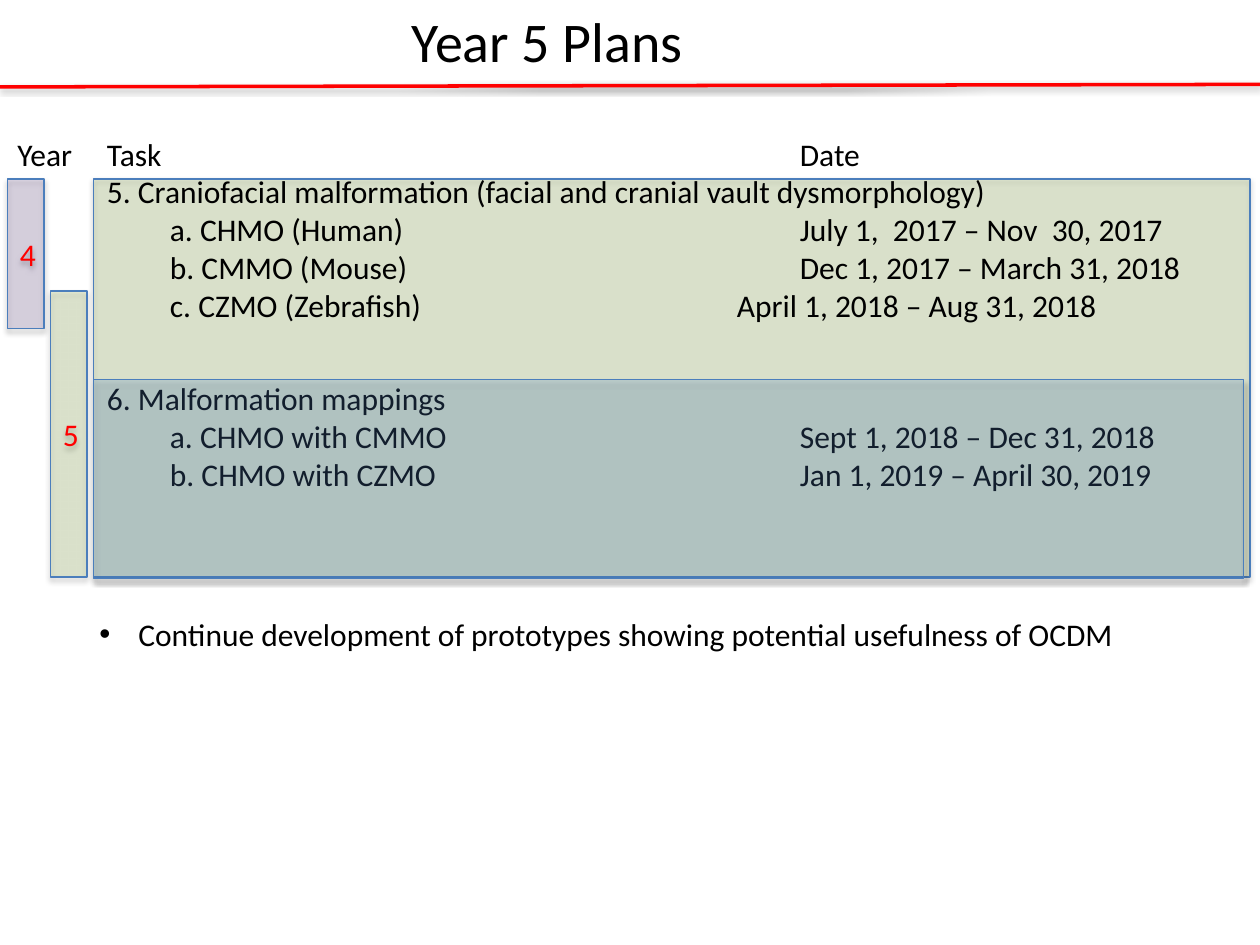
from lxml.etree import SubElement
from pptx import Presentation
from pptx.dml.color import RGBColor
from pptx.enum.shapes import MSO_CONNECTOR, MSO_SHAPE
from pptx.enum.text import MSO_ANCHOR, PP_ALIGN
from pptx.oxml.ns import qn
from pptx.util import Inches, Pt

COLORS = {
    "text": "000000",
    "accent": "FF0000",
    "outline": "4B7EBC",
    "green": "9BBB59",
    "purple": "8064A2",
    "blue": "558ED5",
}
DATE_TAB = 5.5
TASK_ROWS = [
    ("Task\tDate", [DATE_TAB], 0),
    ("5. Craniofacial malformation (facial and cranial vault dysmorphology)", [], 0),
    ("\ta. CHMO (Human)\tJuly 1,  2017 – Nov  30, 2017", [0.5, DATE_TAB], 0),
    ("\tb. CMMO (Mouse)\tDec 1, 2017 – March 31, 2018", [0.5, DATE_TAB], 0),
    ("\tc. CZMO (Zebrafish)\tApril 1, 2018 – Aug 31, 2018", [0.5, DATE_TAB - 0.5], 0),
    ("6. Malformation mappings", [], 31.7),
    ("\ta. CHMO with CMMO \tSept 1, 2018 – Dec 31, 2018", [0.5, DATE_TAB], 0),
    ("\tb. CHMO with CZMO\tJan 1, 2019 – April 30, 2019", [0.5, DATE_TAB], 0),
]
TEXTS = {
    "tasks": ((0.75, 1.02, 9.11, 3.57), 18, True, TASK_ROWS),
    "title": ((3.17, 0, 2.41, 0.64), 32, False, [("Year 5 Plans", [], 0)]),
    "year": ((0.04, 1.02, 0.7, 0.4), 18, True, [("Year", [], 0)]),
    "continuing": (
        (0.69, 4.83, 9.17, 0.4), 18, True,
        [("Continue development of prototypes showing potential usefulness of OCDM", [], 0)],
    ),
}
PANELS = {
    "craniofacial": ((0.74, 1.42, 9.18, 3.16), "green", 22, ""),
    "year 4": ((0.06, 1.42, 0.29, 1.19), "purple", 22, "4"),
    "year 5": ((0.4, 2.31, 0.29, 2.27), "green", 22, "5"),
    "mappings": ((0.74, 3.01, 9.13, 1.58), "blue", 21, ""),
}
DRAW_ORDER = ["craniofacial", "tasks", "rule", "title", "year 4", "year 5", "year", "mappings", "continuing"]


def add_shadow(shape, opacity, distance):
    properties = shape._element.spPr
    effects = properties.find(qn("a:effectLst"))
    if effects is None:
        effects = SubElement(properties, qn("a:effectLst"))
    shadow = SubElement(
        effects, qn("a:outerShdw"), blurRad=str(Pt(3.1)), dist=str(Pt(distance)),
        dir="5400000", rotWithShape="0",
    )
    color = SubElement(shadow, qn("a:srgbClr"), val="000000")
    SubElement(color, qn("a:alpha"), val=str(opacity * 1000))


def format_font(paragraph, size, color):
    values = {"name": "Calibri", "size": Pt(size)}
    for run in paragraph.runs:
        for name, value in values.items():
            setattr(run.font, name, value)
        run.font.color.rgb = RGBColor.from_string(COLORS[color])


presentation = Presentation()
presentation.slide_width = Inches(10)
presentation.slide_height = Inches(7.5)
slide = presentation.slides.add_slide(presentation.slide_layouts[6])

for name in DRAW_ORDER:
    if name == "rule":
        rule = slide.shapes.add_connector(
            MSO_CONNECTOR.STRAIGHT, Inches(0), Inches(0.69), Inches(10), Inches(0.67)
        )
        rule.line.color.rgb = RGBColor.from_string(COLORS["accent"])
        rule.line.width = Pt(2)
        add_shadow(rule, 38, 1.6)
    elif name in PANELS:
        position, color, opacity, label = PANELS[name]
        panel = slide.shapes.add_shape(MSO_SHAPE.RECTANGLE, *map(Inches, position))
        panel.fill.solid()
        panel.fill.fore_color.rgb = RGBColor.from_string(COLORS[color])
        fill_color = panel._element.spPr.find(qn("a:solidFill")).find(qn("a:srgbClr"))
        SubElement(fill_color, qn("a:alpha"), val=str(opacity * 1000))
        panel.line.color.rgb = RGBColor.from_string(COLORS["outline"])
        panel.line.width = Pt(0.75)
        panel.shadow.inherit = False
        add_shadow(panel, 35, 1.8)
        if label:
            panel.text_frame.text = label
            panel.text_frame.vertical_anchor = MSO_ANCHOR.MIDDLE
            paragraph = panel.text_frame.paragraphs[0]
            paragraph.alignment = PP_ALIGN.CENTER
            format_font(paragraph, 18, "accent")
    else:
        position, size, wrap, rows = TEXTS[name]
        text_box = slide.shapes.add_textbox(*map(Inches, position))
        frame = text_box.text_frame
        frame.word_wrap = wrap
        frame.text = "\n".join(text for text, tabs, space in rows)
        for paragraph, (text, tabs, space) in zip(frame.paragraphs, rows):
            if space:
                paragraph.space_before = Pt(space)
            properties = paragraph._p.get_or_add_pPr()
            if name == "continuing":
                properties.set("marL", str(Inches(0.31)))
                properties.set("indent", str(Inches(-0.31)))
                SubElement(properties, qn("a:buFont"), typeface="Arial")
                SubElement(properties, qn("a:buChar"), char="•")
            if tabs:
                tab_list = SubElement(properties, qn("a:tabLst"))
                for tab in tabs:
                    SubElement(tab_list, qn("a:tab"), pos=str(Inches(tab)), algn="l")
            format_font(paragraph, size, "text")

presentation.save("out.pptx")
